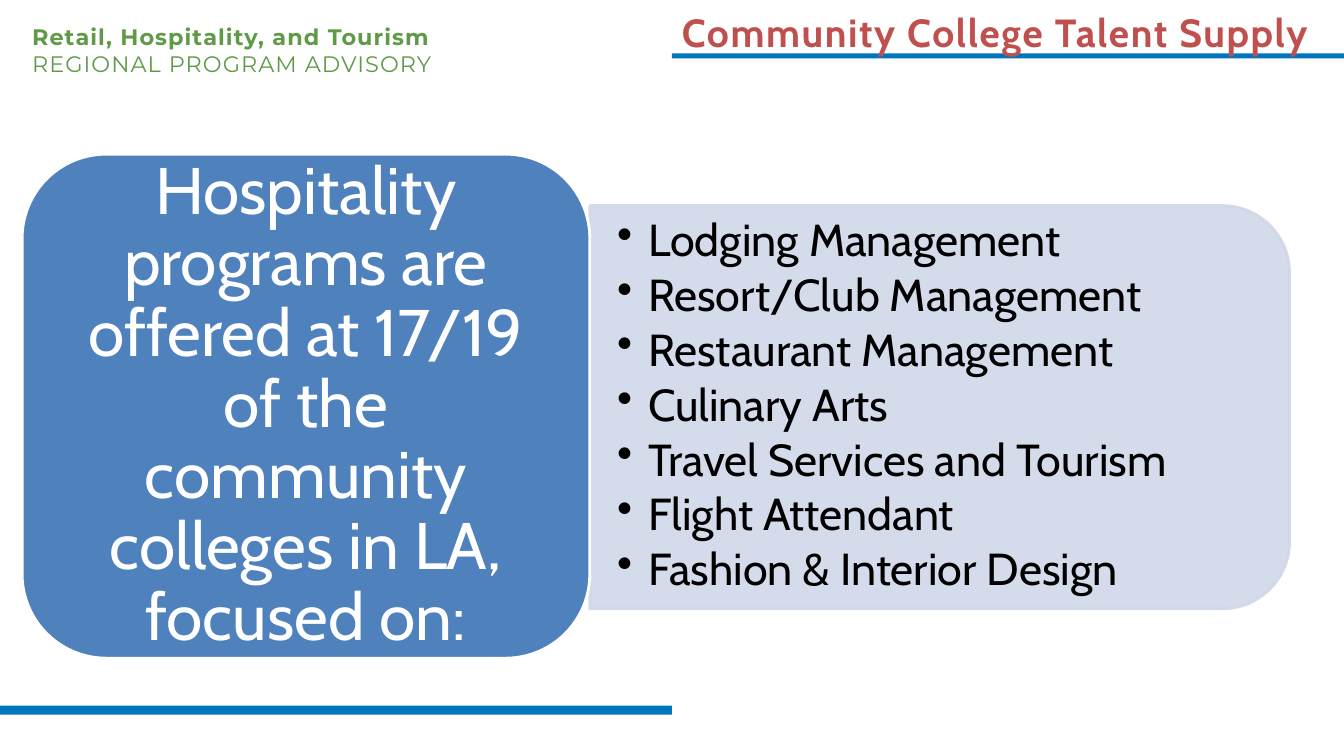
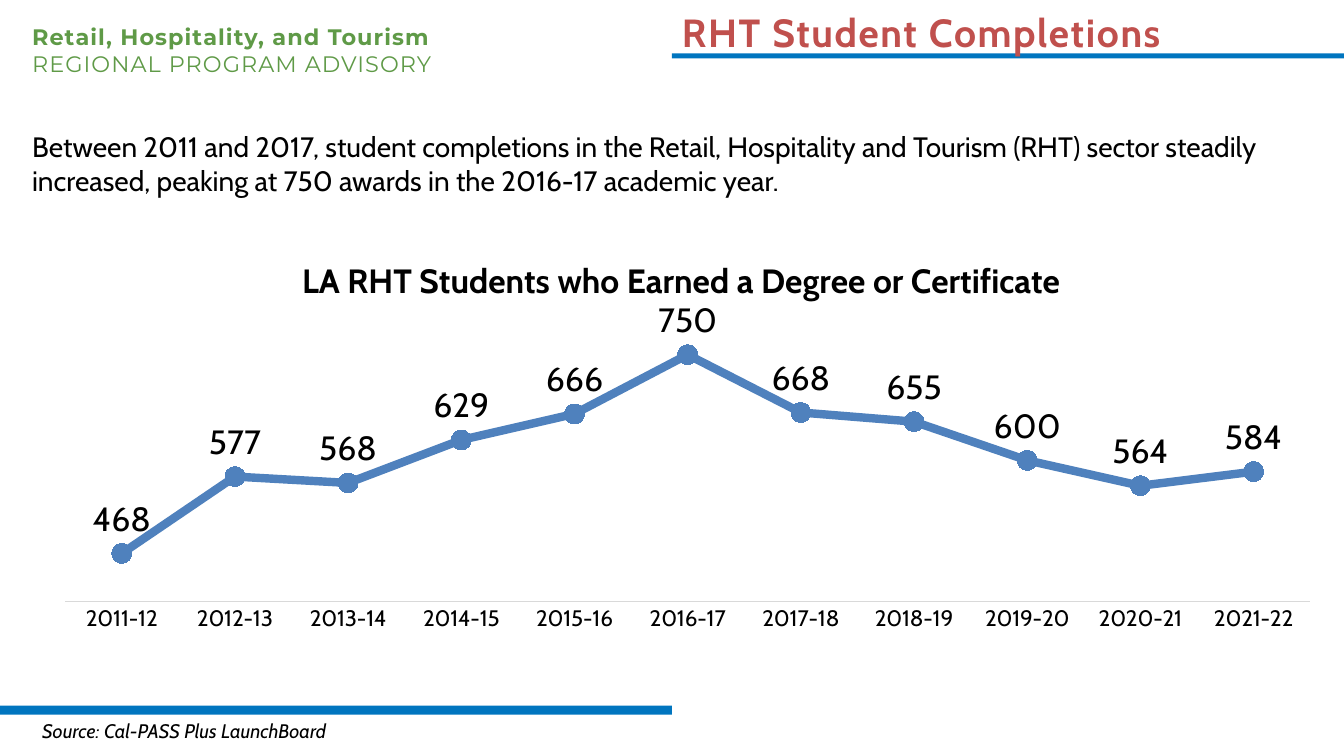
from dataclasses import dataclass

from lxml import etree
from pptx import Presentation
from pptx.chart.data import CategoryChartData
from pptx.dml.color import RGBColor
from pptx.enum.chart import (XL_CHART_TYPE, XL_LABEL_POSITION,
                             XL_MARKER_STYLE, XL_TICK_MARK)
from pptx.enum.shapes import MSO_SHAPE
from pptx.enum.text import MSO_ANCHOR, PP_ALIGN
from pptx.oxml.ns import qn
from pptx.util import Inches, Pt

RECT = MSO_SHAPE.RECTANGLE
ROUNDED = MSO_SHAPE.ROUNDED_RECTANGLE
ROUNDED_TOP = MSO_SHAPE.ROUND_2_SAME_RECTANGLE
MIDDLE = MSO_ANCHOR.MIDDLE
CENTER = PP_ALIGN.CENTER
LINE_MARKERS = XL_CHART_TYPE.LINE_MARKERS
ABOVE = XL_LABEL_POSITION.ABOVE
CIRCLE = XL_MARKER_STYLE.CIRCLE
NO_TICKS = XL_TICK_MARK.NONE

# Content
ADVISORY = ["Retail, Hospitality, and Tourism", "REGIONAL PROGRAM ADVISORY"]
SUPPLY_TITLE = "Community College Talent Supply"
OFFERING = ("Hospitality programs are offered at 17/19 of the community "
            "colleges in LA, focused on:")
PROGRAMS = [
    "Lodging Management",
    "Resort/Club Management",
    "Restaurant Management",
    "Culinary Arts",
    "Travel Services and Tourism",
    "Flight Attendant",
    "Fashion & Interior Design",
]
COMPLETIONS_TITLE = "RHT Student Completions"
SUMMARY = ("Between 2011 and 2017, student completions in the Retail, "
           "Hospitality and Tourism (RHT) sector steadily increased, peaking "
           "at 750 awards in the 2016-17 academic year.")
CHART_TITLE = "LA RHT Students who Earned a Degree or Certificate"
COMPLETIONS = {
    "2011-12": 468, "2012-13": 577, "2013-14": 568, "2014-15": 629,
    "2015-16": 666, "2016-17": 750, "2017-18": 668, "2018-19": 655,
    "2019-20": 600, "2020-21": 564, "2021-22": 584,
}
SOURCE = "Source: Cal-PASS Plus LaunchBoard"


@dataclass(frozen=True)
class Theme:
    body_font: str = "Cabin"
    brand_font: str = "Montserrat"
    band: RGBColor = RGBColor(0x00, 0x75, 0xBF)
    title: RGBColor = RGBColor(0xC0, 0x50, 0x4D)
    brand: RGBColor = RGBColor(0x5F, 0x9A, 0x47)
    accent: RGBColor = RGBColor(0x4F, 0x81, 0xBD)
    panel: RGBColor = RGBColor(0xD0, 0xD8, 0xE8)
    axis: RGBColor = RGBColor(0xD9, 0xD9, 0xD9)
    black: RGBColor = RGBColor(0, 0, 0)
    white: RGBColor = RGBColor(255, 255, 255)
    offering_size: int = 47
    program_size: int = 32
    title_size: int = 28
    chart_size: int = 24
    summary_size: int = 20
    small_size: int = 16
    source_size: int = 14


THEME = Theme()
SLIDE_W, SLIDE_H = 13.33, 7.5
HALF_W = SLIDE_W / 2
MARGIN = 0.22


def style_font(font, size, color, bold=False, italic=False,
               name=THEME.body_font):
    font.name, font.size = name, Pt(size)
    font.bold, font.italic = bold, italic
    font.color.rgb = color


def add_shape(slide, preset, box, fill, outline=None):
    shape = slide.shapes.add_shape(preset, *map(Inches, box))
    shape.shadow.inherit = False
    shape.fill.solid()
    shape.fill.fore_color.rgb = fill
    if outline is None:
        shape.line.fill.background()
    else:
        shape.line.color.rgb = outline
        shape.line.width = Pt(2)
    return shape


def set_insets(frame, side, end):
    frame.margin_left = frame.margin_right = Inches(side)
    frame.margin_top = frame.margin_bottom = Inches(end)


def add_text(slide, box, lines, size, color, tracking=0, **font):
    frame = slide.shapes.add_textbox(*map(Inches, box)).text_frame
    frame.word_wrap = True
    frame.text = "\n".join(lines)
    for paragraph in frame.paragraphs:
        for run in paragraph.runs:
            style_font(run.font, size, color, **font)
            if tracking:
                run.font._element.set("spc", str(round(tracking * 100)))
    return frame


def add_base_slide(prs, title):
    """Blank slide with the shared bands, advisory name and title."""
    slide = prs.slides.add_slide(prs.slide_layouts[6])
    add_shape(slide, RECT, (0, 7, HALF_W, 0.09), THEME.band)
    add_shape(slide, RECT, (HALF_W, 0.53, HALF_W, 0.05), THEME.band)
    add_text(slide, (HALF_W, 0.03, HALF_W, 0.57), [title],
             THEME.title_size, THEME.title, tracking=1.2, bold=True)
    advisory = add_text(slide, (MARGIN, 0.18, 4.76, 0.91), ADVISORY,
                        THEME.small_size, THEME.brand, tracking=0.8,
                        name=THEME.brand_font)
    advisory.paragraphs[0].runs[0].font.bold = True
    return slide


def add_bullet(paragraph, indent):
    properties = paragraph._p.get_or_add_pPr()
    properties.set("marL", str(Inches(indent)))
    properties.set("indent", str(-Inches(indent)))
    etree.SubElement(properties, qn("a:buChar")).set("char", "•")


def set_layout(parent, position, **values):
    """Place a chart part by fractions of the chart area."""
    layout = parent.find(qn("c:layout"))
    if layout is None:
        layout = etree.Element(qn("c:layout"))
        parent.insert(position, layout)
    manual = etree.SubElement(layout, qn("c:manualLayout"))
    for tag, value in values.items():
        etree.SubElement(manual, qn(f"c:{tag}")).set("val", str(value))


def build_supply(prs):
    slide = add_base_slide(prs, SUPPLY_TITLE)

    # Program panel: a tall shape turned a quarter to round its right side
    left, top, width, height = 5.85, 2.04, 6.94, 4
    shift = (width - height) / 2
    panel = add_shape(slide, ROUNDED_TOP,
                      (left + shift, top - shift, height, width),
                      THEME.panel, THEME.panel)
    panel.rotation = 90
    for color in panel._element.spPr.iter(qn("a:srgbClr")):
        etree.SubElement(color, qn("a:alpha")).set("val", "90000")

    programs = add_text(slide, (left, 2.23, 6.74, 3.61), PROGRAMS,
                        THEME.program_size, THEME.black)
    programs.vertical_anchor = MIDDLE
    set_insets(programs, 0.27, 0.14)
    for paragraph in programs.paragraphs:
        add_bullet(paragraph, 0.31)
        paragraph.line_spacing = 0.9
        paragraph.space_after = Pt(4.6)

    # Offering card
    card = add_shape(slide, ROUNDED, (MARGIN, 1.53, left - MARGIN, 5),
                     THEME.accent, THEME.white)
    offering = card.text_frame
    offering.word_wrap = True
    offering.vertical_anchor = MIDDLE
    set_insets(offering, 0.2, 0.1)
    offering.text = OFFERING
    paragraph = offering.paragraphs[0]
    paragraph.alignment = CENTER
    paragraph.line_spacing = 0.9
    style_font(paragraph.runs[0].font, THEME.offering_size, THEME.white)


def add_completions_chart(slide):
    data = CategoryChartData()
    data.categories = list(COMPLETIONS)
    data.add_series("Series 1", list(COMPLETIONS.values()))
    box = map(Inches, (MARGIN, 2.24, 12.93, 4.15))
    chart = slide.shapes.add_chart(LINE_MARKERS, *box, data).chart
    style_font(chart.font, THEME.chart_size, THEME.black)
    chart.has_legend = False

    # Title and plot position
    heading = chart.chart_title.text_frame
    heading.text = CHART_TITLE
    style_font(heading.paragraphs[0].runs[0].font, THEME.chart_size,
               THEME.black, bold=True)
    set_layout(chart.chart_title._element, 1,
               xMode="edge", yMode="edge", x=0.21, y=0.06)
    set_layout(chart._chartSpace.chart.plotArea, 0, layoutTarget="inner",
               xMode="edge", yMode="edge", x=0.033, y=0.224, w=0.955, h=0.674)

    # Axes
    years, awards = chart.category_axis, chart.value_axis
    years.major_tick_mark = years.minor_tick_mark = NO_TICKS
    years.format.line.color.rgb = THEME.axis
    years.format.line.width = Pt(0.75)
    style_font(years.tick_labels.font, THEME.small_size, THEME.black)
    awards.minimum_scale, awards.maximum_scale = 400, 800
    awards.has_major_gridlines = False
    awards.visible = False

    # Line, markers and value labels
    plot = chart.plots[0]
    plot.vary_by_categories = False
    completions = plot.series[0]
    completions.smooth = False
    completions.format.line.color.rgb = THEME.accent
    completions.format.line.width = Pt(6)
    marker = completions.marker
    marker.style, marker.size = CIRCLE, 14
    marker.format.fill.solid()
    marker.format.fill.fore_color.rgb = THEME.accent
    marker.format.line.color.rgb = THEME.accent
    labels = completions.data_labels
    labels.show_value = True
    labels.position = ABOVE
    style_font(labels.font, THEME.chart_size, THEME.black)


def build_completions(prs):
    slide = add_base_slide(prs, COMPLETIONS_TITLE)
    add_text(slide, (MARGIN, 1.24, 12.57, 0.77), [SUMMARY],
             THEME.summary_size, THEME.black)
    add_completions_chart(slide)
    add_text(slide, (0.32, 7.08, 8.38, 0.34), [SOURCE],
             THEME.source_size, THEME.black, italic=True)


def main():
    prs = Presentation()
    prs.slide_width, prs.slide_height = Inches(SLIDE_W), Inches(SLIDE_H)
    build_supply(prs)
    build_completions(prs)
    prs.save("out.pptx")


if __name__ == "__main__":
    main()
